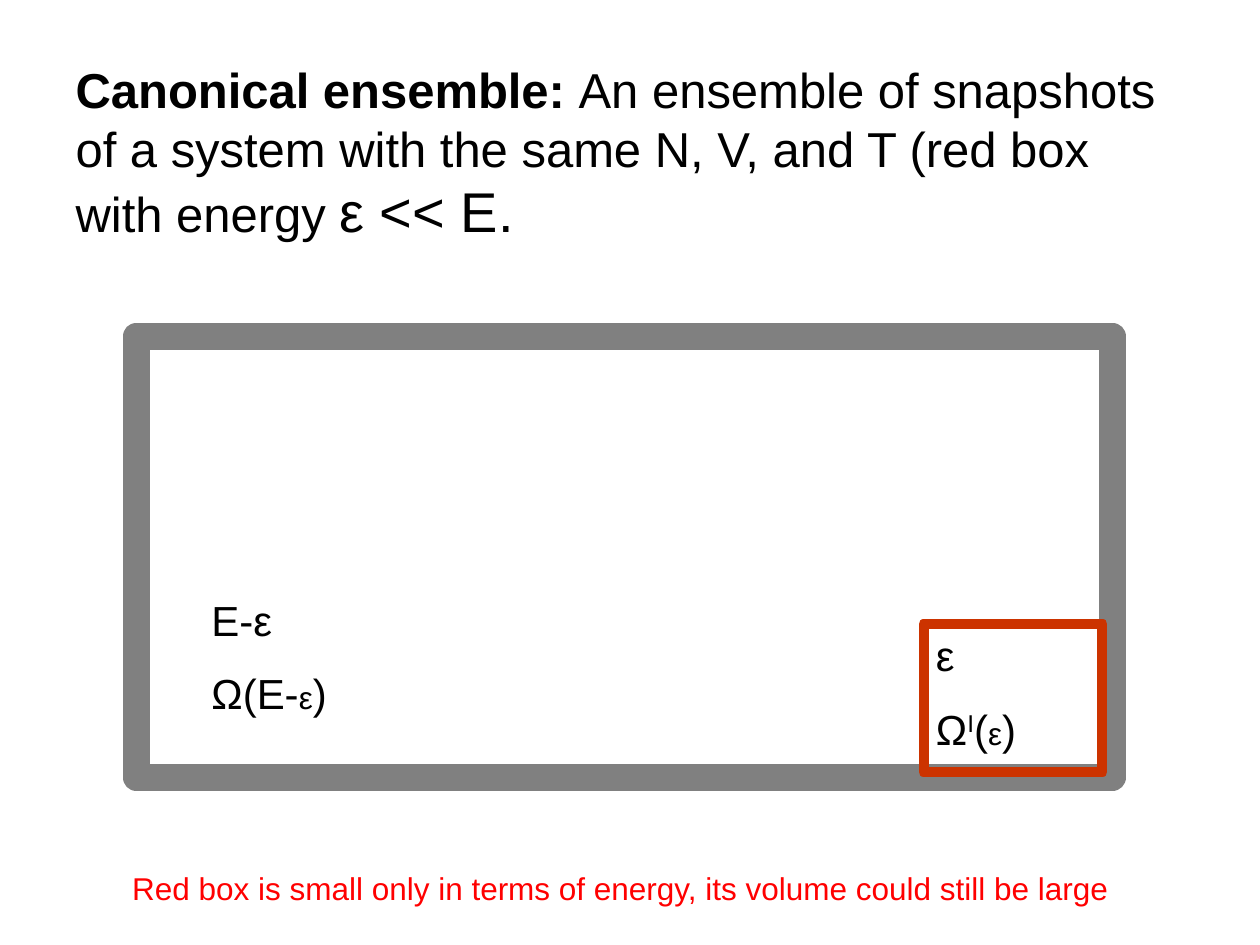
from pptx import Presentation
from pptx.dml.color import RGBColor
from pptx.enum.shapes import MSO_SHAPE
from pptx.enum.text import MSO_ANCHOR, MSO_AUTO_SIZE, PP_ALIGN
from pptx.util import Inches, Pt

RECTANGLE = MSO_SHAPE.RECTANGLE
TOP = MSO_ANCHOR.TOP
GROW = MSO_AUTO_SIZE.SHAPE_TO_FIT_TEXT
LEFT = PP_ALIGN.LEFT
TITLE_ONLY = 5

THEME = {
    "font": "Arial",
    "text": RGBColor(0x00, 0x00, 0x00),
    "note": RGBColor(0xFF, 0x00, 0x00),
    "reservoir": RGBColor(0x80, 0x80, 0x80),
    "system": RGBColor(0xCC, 0x33, 0x00),
    "definition_size": 28,
    "energy_size": 32,
    "label_size": 24,
    "small_size": 18,
    "paragraph_gap": 13,
}
SMALL = {"size": Pt(THEME["small_size"])}

# Each paragraph is a list of (text, font changes) runs.
DEFINITION = [[
    ("Canonical ensemble: ", {"bold": True}),
    ("An ensemble of snapshots of a system with the same N, V, and T "
     "(red box with energy ", {}),
    ("ε << E.", {"size": Pt(THEME["energy_size"])}),
]]
RESERVOIR_LABELS = [
    [("E-ε", {})],
    [("Ω(E-", {}), ("ε", SMALL), (")", {})],
]
SYSTEM_LABELS = [
    [("ε", {})],
    [("Ω", {}), ("I", {"superscript": 30}), ("(", {}), ("ε", SMALL), (")", {})],
]
NOTE = [[("Red box is small only in terms of energy, "
          "its volume could still be large", {})]]

# left, top, width, height in inches
DEFINITION_BOX = (0.5, 0.42, 8.92, 1.57)
RESERVOIR_BOX = (1.08, 2.67, 7.75, 3.5)
RESERVOIR_LABEL_BOX = (1.58, 4.67, 1.17, 1.1)
SYSTEM_BOX = (7.33, 4.95, 1.42, 1.18)
NOTE_BOX = (0.95, 6.85, 8.02, 0.4)


def inches(box):
    return [Inches(length) for length in box]


def write(shape, paragraphs, size, color=THEME["text"], wrap=True):
    frame = shape.text_frame
    frame_format = {
        "word_wrap": wrap, "auto_size": GROW, "vertical_anchor": TOP,
        "margin_left": Inches(0.1), "margin_right": Inches(0.1),
        "margin_top": Inches(0.05), "margin_bottom": Inches(0.05),
    }
    for name, value in frame_format.items():
        setattr(frame, name, value)
    for index, runs in enumerate(paragraphs):
        paragraph = frame.add_paragraph() if index else frame.paragraphs[0]
        paragraph.alignment = LEFT
        paragraph.space_before = Pt(THEME["paragraph_gap"] if index else 0)
        for text, changes in runs:
            run = paragraph.add_run()
            run.text = text
            run.font.color.rgb = color
            font_format = {"name": THEME["font"], "size": Pt(size),
                           "bold": False, **changes}
            raised = font_format.pop("superscript", 0)
            for name, value in font_format.items():
                setattr(run.font, name, value)
            if raised:
                run._r.get_or_add_rPr().set("baseline", str(raised * 1000))


def add_frame(slide, box, color, width):
    frame = slide.shapes.add_shape(RECTANGLE, *inches(box))
    frame.shadow.inherit = False
    frame.fill.background()
    frame.line.color.rgb = color
    frame.line.width = Pt(width)
    return frame


def main():
    deck = Presentation()
    deck.slide_width, deck.slide_height = Inches(10), Inches(7.5)
    slide = deck.slides.add_slide(deck.slide_layouts[TITLE_ONLY])

    definition = slide.shapes.title
    definition.left, definition.top, definition.width, definition.height = (
        inches(DEFINITION_BOX))
    write(definition, DEFINITION, THEME["definition_size"])

    add_frame(slide, RESERVOIR_BOX, THEME["reservoir"], 15.5)
    reservoir_label = slide.shapes.add_textbox(*inches(RESERVOIR_LABEL_BOX))
    write(reservoir_label, RESERVOIR_LABELS, THEME["label_size"])

    system = add_frame(slide, SYSTEM_BOX, THEME["system"], 5.75)
    write(system, SYSTEM_LABELS, THEME["label_size"])

    note = slide.shapes.add_textbox(*inches(NOTE_BOX))
    write(note, NOTE, THEME["small_size"], THEME["note"], wrap=False)

    deck.save("out.pptx")


if __name__ == "__main__":
    main()
